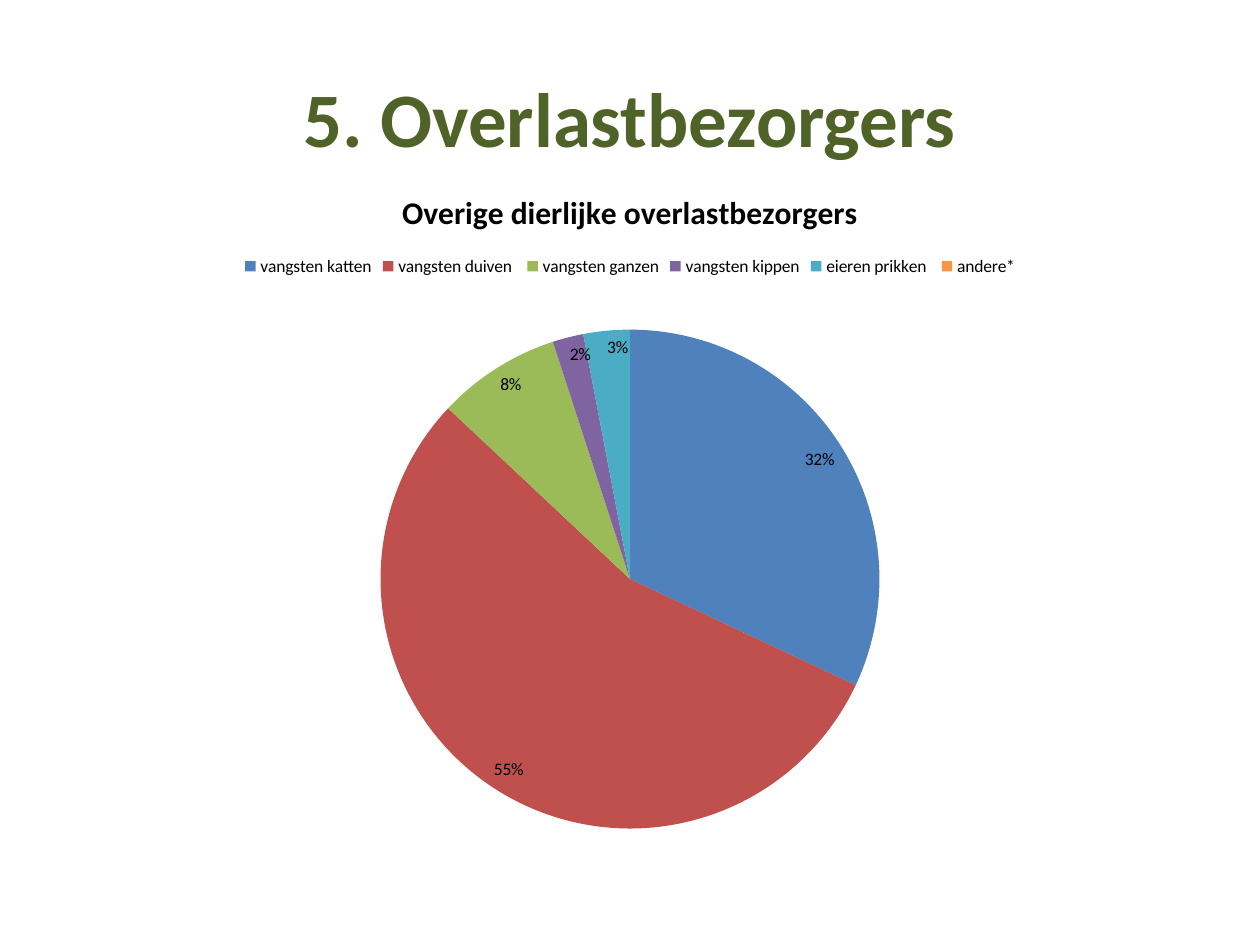
import pptx
import pptx.chart.data
import pptx.dml.color
import pptx.enum.chart
import pptx.enum.text
import pptx.oxml
import pptx.oxml.ns
import pptx.util

PX = 914400 / 126
FONT = "Calibri"
NAME = "Overige dierlijke overlastbezorgers"
SLICES = [
    ("vangsten katten", 32, "4F81BD"),
    ("vangsten duiven ", 55, "C0504D"),
    ("vangsten ganzen", 8, "9BBB59"),
    ("vangsten kippen", 2, "8064A2"),
    ("eieren prikken ", 3, "4BACC6"),
    ("andere*", 0, "F79646"),
]


def emu(px):
    return pptx.util.Emu(round(px * PX))


def rgb(code):
    return pptx.dml.color.RGBColor.from_string(code)


def style(font, size, color, bold=False):
    font.name = FONT
    font.size = pptx.util.Pt(size)
    font.bold = bold
    font.color.rgb = rgb(color)


def add_title(slide, box):
    title = slide.shapes.title
    title.left, title.top, title.width, title.height = map(emu, box)
    frame = title.text_frame
    frame.vertical_anchor = pptx.enum.text.MSO_ANCHOR.MIDDLE
    para = frame.paragraphs[0]
    para.alignment = pptx.enum.text.PP_ALIGN.CENTER
    run = para.add_run()
    run.text = "5. Overlastbezorgers"
    style(run.font, 44, "4F6228", True)


def set_plot(chart, x, y, w, h):
    """Fix the inner plot area, in fractions of the chart."""
    area = chart._chartSpace.chart.plotArea
    for old in area.findall(pptx.oxml.ns.qn("c:layout")):
        area.remove(old)
    area.insert(0, pptx.oxml.parse_xml(
        f'<c:layout {pptx.oxml.ns.nsdecls("c")}><c:manualLayout>'
        '<c:layoutTarget val="inner"/><c:xMode val="edge"/><c:yMode val="edge"/>'
        f'<c:x val="{x}"/><c:y val="{y}"/><c:w val="{w}"/><c:h val="{h}"/>'
        '</c:manualLayout></c:layout>'))


def hide_label(labels, index):
    labels._element.insert(0, pptx.oxml.parse_xml(
        f'<c:dLbl {pptx.oxml.ns.nsdecls("c")}><c:idx val="{index}"/>'
        '<c:delete val="1"/></c:dLbl>'))


def add_pie(slide, box):
    data = pptx.chart.data.CategoryChartData()
    data.categories = [name for name, _, _ in SLICES]
    data.add_series(NAME, [value for _, value, _ in SLICES])
    chart = slide.shapes.add_chart(
        pptx.enum.chart.XL_CHART_TYPE.PIE, *map(emu, box), data).chart
    style(chart.font, 10, "000000")

    chart.has_title = True
    run = chart.chart_title.text_frame.paragraphs[0].add_run()
    run.text = NAME
    style(run.font, 18, "000000", True)
    chart.chart_title.include_in_layout = False

    chart.has_legend = True
    chart.legend.position = pptx.enum.chart.XL_LEGEND_POSITION.TOP
    chart.legend.include_in_layout = False
    style(chart.legend.font, 10, "000000")

    plot = chart.plots[0]
    plot.vary_by_categories = True
    series = plot.series[0]
    labels = series.data_labels
    labels.show_percentage = True
    labels.show_value = False
    labels.number_format = "0%"
    labels.number_format_is_linked = False
    labels.position = pptx.enum.chart.XL_LABEL_POSITION.INSIDE_END
    style(labels.font, 10, "000000")
    for index, (_, value, color) in reversed(list(enumerate(SLICES))):
        fill = series.points[index].format.fill
        fill.solid()
        fill.fore_color.rgb = rgb(color)
        if not value:
            hide_label(labels, index)
    set_plot(chart, 0.28, 0.24, 0.44, 0.74)


def main():
    deck = pptx.Presentation()
    deck.slide_width, deck.slide_height = emu(1260), emu(945)
    slide = deck.slides.add_slide(deck.slide_layouts.get_by_name("Title Only"))
    add_title(slide, (63, 38, 1134, 158))
    add_pie(slide, (63, 165, 1134, 679))
    deck.save("out.pptx")


if __name__ == "__main__":
    main()
